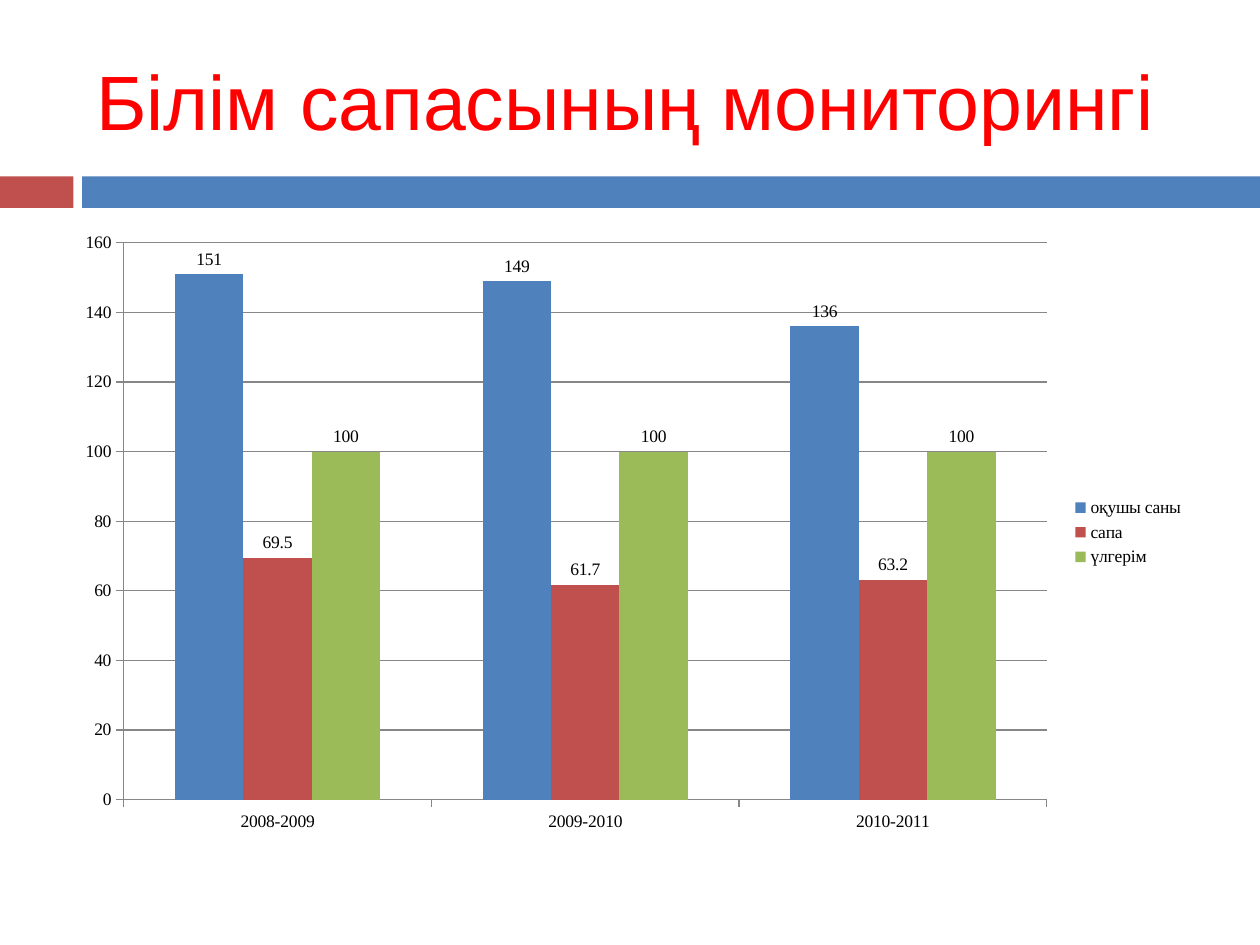
from pptx import Presentation
from pptx.chart.data import CategoryChartData
from pptx.dml.color import RGBColor
from pptx.enum.chart import XL_CHART_TYPE, XL_LABEL_POSITION, XL_LEGEND_POSITION, XL_TICK_MARK
from pptx.enum.shapes import MSO_SHAPE
from pptx.enum.text import MSO_ANCHOR, PP_ALIGN
from pptx.util import Pt

RECTANGLE = MSO_SHAPE.RECTANGLE
MIDDLE = MSO_ANCHOR.MIDDLE
LEFT = PP_ALIGN.LEFT
CLUSTERED = XL_CHART_TYPE.COLUMN_CLUSTERED
OUTSIDE_END = XL_LABEL_POSITION.OUTSIDE_END
LEGEND_RIGHT = XL_LEGEND_POSITION.RIGHT
TICK_OUTSIDE = XL_TICK_MARK.OUTSIDE

COLORS = {"title": "FF0000", "text": "000000", "line": "878787",
          "blue": "4F81BD", "red": "C0504D", "green": "9BBB59"}
TITLE_FONT = {"name": "Arial", "size": Pt(44), "bold": False}
CHART_FONT = {"name": "Times New Roman", "size": Pt(10), "bold": False}

YEARS = ["2008-2009", "2009-2010", "2010-2011"]
SERIES = [("оқушы саны", (151, 149, 136), "blue"),
          ("сапа", (69.5, 61.7, 63.2), "red"),
          ("үлгерім", (100, 100, 100), "green")]


def color(name):
    return RGBColor.from_string(COLORS[name])


def set_attributes(target, values):
    for name, value in values.items():
        setattr(target, name, value)


def set_font(font, values, color_name):
    set_attributes(font, values)
    font.color.rgb = color(color_name)


def fill_solid(part, color_name):
    part.fill.solid()
    part.fill.fore_color.rgb = color(color_name)


def add_title(slide, left, top, width, height):
    box = slide.shapes.add_textbox(Pt(left), Pt(top), Pt(width), Pt(height))
    set_attributes(box.text_frame, {"word_wrap": True, "vertical_anchor": MIDDLE})
    paragraph = box.text_frame.paragraphs[0]
    paragraph.alignment = LEFT
    run = paragraph.add_run()
    run.text = "Білім сапасының мониторингі"
    set_font(run.font, TITLE_FONT, "title")


def add_band(slide, left, top, width, height):
    """Add a short red block and a long blue bar with a gap between them."""
    block_width, gap = 42, 5
    bar_offset = block_width + gap
    for offset, part_width, color_name in (
            (0, block_width, "red"), (bar_offset, width - bar_offset, "blue")):
        shape = slide.shapes.add_shape(
            RECTANGLE, Pt(left + offset), Pt(top), Pt(part_width), Pt(height))
        shape.shadow.inherit = False
        fill_solid(shape, color_name)
        shape.line.fill.background()


def add_quality_chart(slide, left, top, width, height):
    data = CategoryChartData()
    data.categories = YEARS
    for name, values, _ in SERIES:
        data.add_series(name, values)
    chart = slide.shapes.add_chart(
        CLUSTERED, Pt(left), Pt(top), Pt(width), Pt(height), data).chart
    set_attributes(chart, {"has_title": False, "has_legend": True})
    set_font(chart.font, CHART_FONT, "text")
    set_attributes(chart.legend, {"position": LEGEND_RIGHT, "include_in_layout": False})

    plot = chart.plots[0]
    set_attributes(plot, {"gap_width": 150, "overlap": 0, "vary_by_categories": False})
    for series, (_, _, color_name) in zip(plot.series, SERIES):
        fill_solid(series.format, color_name)
        labels = series.data_labels
        set_attributes(labels, {"show_value": True, "position": OUTSIDE_END})
        set_font(labels.font, CHART_FONT, "text")

    value_axis = chart.value_axis
    set_attributes(value_axis, {"minimum_scale": 0, "maximum_scale": 160,
                                "major_unit": 20, "has_major_gridlines": True})
    for axis in (chart.category_axis, value_axis):
        axis.major_tick_mark = TICK_OUTSIDE
    for part in (chart.category_axis, value_axis, value_axis.major_gridlines):
        part.format.line.color.rgb = color("line")
        part.format.line.width = Pt(0.75)


def main():
    presentation = Presentation()
    set_attributes(presentation, {"slide_width": Pt(720), "slide_height": Pt(540)})
    slide = presentation.slides.add_slide(presentation.slide_layouts[6])
    add_band(slide, 0, 100.8, 720, 18)
    add_title(slide, 48, 18, 642, 78)
    add_quality_chart(slide, 36, 126, 648, 356.4)
    presentation.save("out.pptx")


if __name__ == "__main__":
    main()
